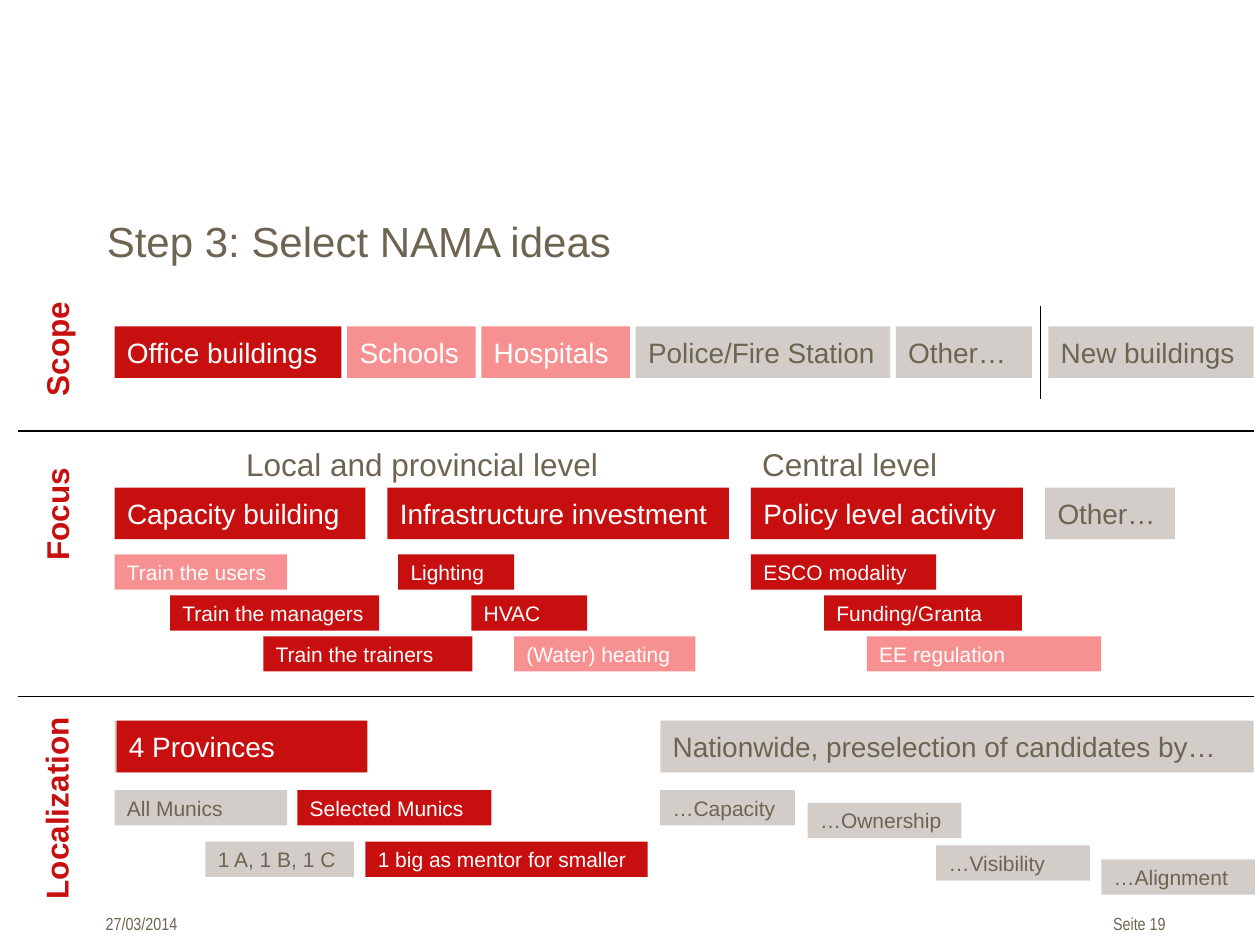
from dataclasses import dataclass

from lxml.etree import SubElement
from pptx import Presentation
from pptx.dml.color import RGBColor
from pptx.enum.shapes import MSO_CONNECTOR, MSO_SHAPE
from pptx.enum.text import MSO_ANCHOR as Anchor, PP_ALIGN as Align
from pptx.oxml.ns import qn
from pptx.util import Inches, Pt

WIDTH, HEIGHT = Inches(10), Inches(7.5)
RED, PINK, GREY = "C80F0F", "F79191", "D2CDC8"
BROWN, WHITE, BLACK = "6E6452", "FFFFFF", "000000"

# All lengths below are percentages of the slide's width or height.
MARGIN = 9.1
BAR_HEIGHT, TAG_HEIGHT = 5.47, 3.73
SCOPE_TOP, FOCUS_TOP, PLACE_TOP = 34.53, 51.6, 76.27
FOCUS_TAG_TOP, FOCUS_TAG_STEP = 58.67, 4.33
PLACE_TAG_TOP, PLACE_TAG_STEP = 83.6, 5.47


@dataclass
class Bar:
    text: str
    width: float
    fill: str


@dataclass
class Tag:
    text: str
    left: float
    top: float
    width: float
    fill: str


@dataclass
class Label:
    text: str
    left: float
    top: float
    width: float
    height: float
    size: float = 18
    color: str = BROWN
    font: str = "Arial"
    align: Align = Align.LEFT
    bold: bool = False
    rotation: float = 0
    inset_top: float = 0.05
    inset_right: float = 0.1


SCOPE_BARS = [
    Bar("Office buildings", 18, RED),
    Bar("Schools", 10.2, PINK),
    Bar("Hospitals", 11.8, PINK),
    Bar("Police/Fire Station", 20.2, GREY),
    Bar("Other…", 10.8, GREY),
]
FOCUS_BARS = [
    Bar("Capacity building", 19.9, RED),
    Bar("Infrastructure investment", 27.1, RED),
    Bar("Policy level activity", 21.6, RED),
    Bar("Other…", 10.3, GREY),
]
# Tag tops count rows below the first tag row of their section.
FOCUS_TAGS = [
    Tag("Train the users", MARGIN, 0, 13.7, PINK),
    Tag("Train the managers", 13.5, 1, 16.6, RED),
    Tag("Train the trainers", 20.9, 2, 16.6, RED),
    Tag("Lighting", 31.6, 0, 9.2, RED),
    Tag("HVAC", 37.4, 1, 9.2, RED),
    Tag("(Water) heating", 40.8, 2, 14.4, PINK),
    Tag("ESCO modality", 59.6, 0, 14.7, RED),
    Tag("Funding/Granta", 65.4, 1, 15.7, RED),
    Tag("EE regulation", 68.8, 2, 18.6, PINK),
]
PLACE_TAGS = [
    Tag("All Munics", MARGIN, 0, 13.7, GREY),
    Tag("Selected Munics", 23.6, 0, 15.4, RED),
    Tag("1 A, 1 B, 1 C", 16.3, 1, 11.8, GREY),
    Tag("1 big as mentor for smaller", 29, 1, 22.4, RED),
    Tag("…Capacity", 52.4, 0, 10.7, GREY),
    Tag("…Ownership", 64.1, 0.25, 12.2, GREY),
    Tag("…Visibility", 74.3, 1.07, 12.2, GREY),
    Tag("…Alignment", 87.4, 1.34, 12.2, GREY),
]
SECTION = dict(color=RED, bold=True, rotation=270)
LABELS = [
    Label("Step 3: Select NAMA ideas", 7.5, 21.6, 90.3, 9.07, size=24, inset_top=0.09),
    Label("Scope", -2.8, 34.27, 14.6, 5.33, align=Align.CENTER, **SECTION),
    Label("Focus", -2.8, 51.73, 14.6, 5.33, align=Align.CENTER, **SECTION),
    Label("Localization", -3.9, 82.67, 16.7, 5.33, **SECTION),
    Label("Local and provincial level", MARGIN, 46.4, 48.8, 5.33, align=Align.CENTER),
    Label("Central level", 59.5, 46.4, 40, 5.33),
    Label("27/03/2014", 7.4, 96, 14.2, 3.6, size=10, font="Arial Narrow"),
    Label("Seite 19", 82.4, 96, 10.1, 3.6, size=10, font="Arial Narrow",
          align=Align.RIGHT, inset_right=0),
]
RULES = [
    (82.6, 32.4, 82.6, 42.27),
    (1.4, 45.6, 99.5, 45.6),
    (1.4, 73.73, 99.5, 73.73),
]


def rgb(color: str) -> RGBColor:
    return RGBColor.from_string(color)


def across(share: float) -> int:
    return round(WIDTH * share / 100)


def down(share: float) -> int:
    return round(HEIGHT * share / 100)


def add_text(frame, text: str, size: float, color: str, font: str = "Arial",
             align: Align = Align.LEFT, bold: bool = False) -> None:
    paragraph = frame.paragraphs[0]
    paragraph.alignment = align
    run = paragraph.add_run()
    run.text = text
    run.font.name, run.font.size, run.font.bold = font, Pt(size), bold
    run.font.color.rgb = rgb(color)


def draw_box(slide, tag: Tag, height: float, size: float) -> None:
    box = slide.shapes.add_shape(MSO_SHAPE.RECTANGLE, across(tag.left), down(tag.top),
                                 across(tag.width), down(height))
    box.shadow.inherit = False
    box.fill.solid()
    box.fill.fore_color.rgb = rgb(tag.fill)
    box.line.fill.background()
    box.text_frame.word_wrap = False
    box.text_frame.vertical_anchor = Anchor.MIDDLE
    if tag.text:
        add_text(box.text_frame, tag.text, size, BROWN if tag.fill == GREY else WHITE)


def draw_bar(slide, bar: Bar, left: float, top: float) -> None:
    draw_box(slide, Tag(bar.text, left, top, bar.width, bar.fill), BAR_HEIGHT, 16)


def draw_bar_row(slide, bars: list[Bar], top: float, gap: float) -> None:
    """Lay the bars side by side from the left margin."""
    left = MARGIN
    for bar in bars:
        draw_bar(slide, bar, left, top)
        left += bar.width + gap


def draw_tags(slide, tags: list[Tag], top: float, step: float) -> None:
    for tag in tags:
        placed = Tag(tag.text, tag.left, top + tag.top * step, tag.width, tag.fill)
        draw_box(slide, placed, TAG_HEIGHT, 12)


def draw_label(slide, label: Label) -> None:
    box = slide.shapes.add_textbox(across(label.left), down(label.top),
                                   across(label.width), down(label.height))
    box.rotation = label.rotation
    frame = box.text_frame
    frame.word_wrap = True
    frame.margin_top, frame.margin_right = Inches(label.inset_top), Inches(label.inset_right)
    add_text(frame, label.text, label.size, label.color, label.font, label.align, label.bold)


def draw_rule(slide, x1: float, y1: float, x2: float, y2: float) -> None:
    rule = slide.shapes.add_connector(MSO_CONNECTOR.STRAIGHT, across(x1), down(y1),
                                      across(x2), down(y2))
    rule.line.color.rgb = rgb(BLACK)
    rule.line.width = Pt(0.75)
    SubElement(rule._element.spPr, qn("a:effectLst"))


def main() -> None:
    deck = Presentation()
    deck.slide_width, deck.slide_height = WIDTH, HEIGHT
    slide = deck.slides.add_slide(deck.slide_layouts[6])

    draw_bar_row(slide, SCOPE_BARS, SCOPE_TOP, gap=0.45)
    draw_bar(slide, Bar("New buildings", 16.3, GREY), 83.2, SCOPE_TOP)
    draw_bar_row(slide, FOCUS_BARS, FOCUS_TOP, gap=1.75)
    draw_tags(slide, FOCUS_TAGS, FOCUS_TAG_TOP, FOCUS_TAG_STEP)
    draw_bar(slide, Bar("", 19.9, GREY), MARGIN, PLACE_TOP)
    draw_bar(slide, Bar("4 Provinces", 19.9, RED), MARGIN + 0.15, PLACE_TOP)
    draw_bar(slide, Bar("Nationwide, preselection of candidates by…", 47.1, GREY),
             52.4, PLACE_TOP)
    draw_tags(slide, PLACE_TAGS, PLACE_TAG_TOP, PLACE_TAG_STEP)
    for rule in RULES:
        draw_rule(slide, *rule)
    for label in LABELS:
        draw_label(slide, label)

    deck.save("out.pptx")


if __name__ == "__main__":
    main()
